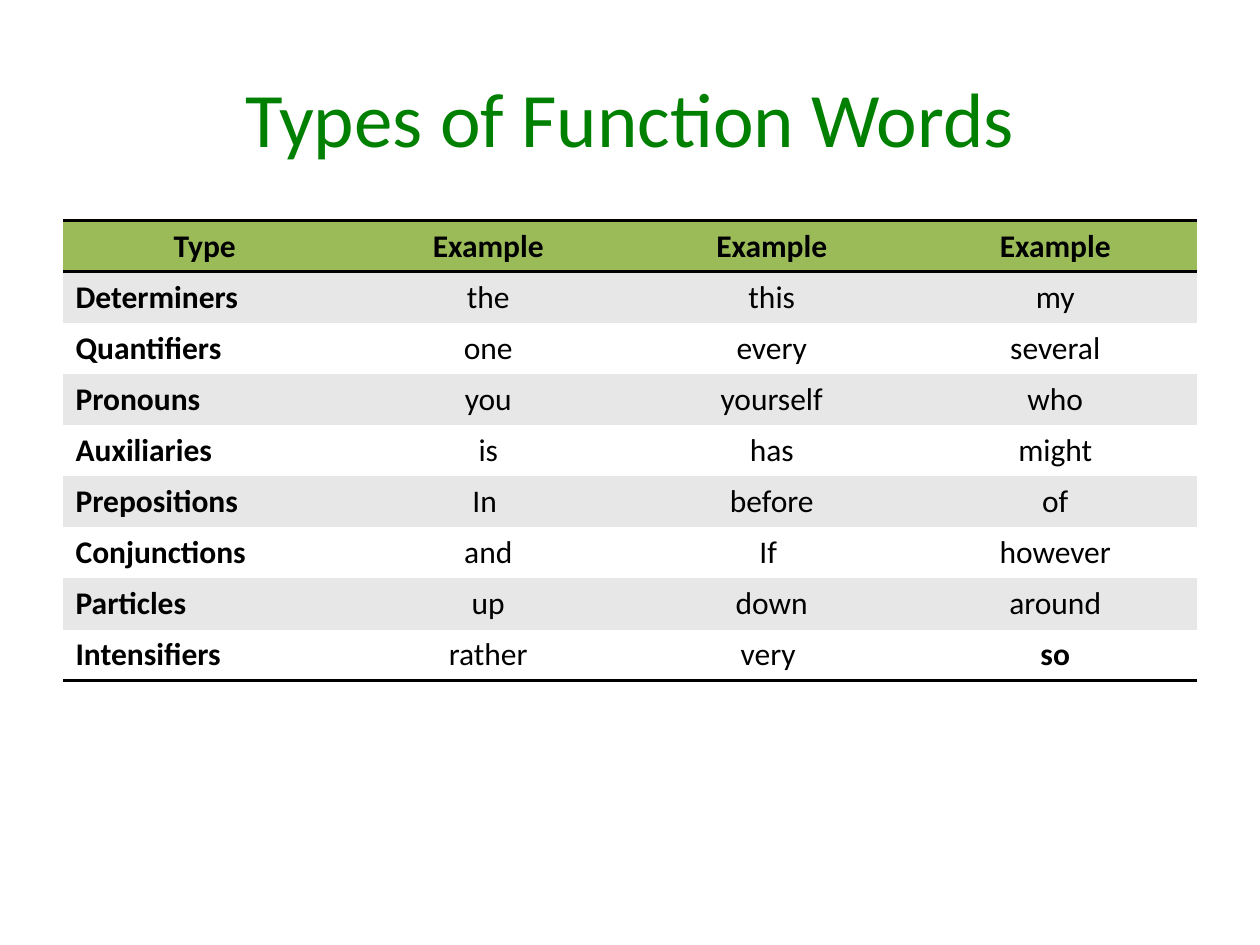
from dataclasses import dataclass

from lxml import etree
from pptx import Presentation
from pptx import util as u
from pptx.dml import color
from pptx.enum import text
from pptx.oxml import ns


@dataclass(frozen=True)
class Theme:
    """Colours, font and type sizes of the slide."""
    green: str = "008000"
    head: str = "9BBB59"
    band: str = "E7E7E7"
    white: str = "FFFFFF"
    black: str = "000000"
    font: str = "Calibri"
    big: int = 44
    body: int = 18
    rule: int = 2


THEME = Theme()
PLAIN = "{2D5ABB26-0587-4C30-8999-92F81FD0307C}"
ROWS = [
    ("Type", "Example", "Example", "Example"),
    ("Determiners", "the", "this", "my"),
    ("Quantifiers", "one", "every", "several"),
    ("Pronouns", "you", "yourself", "who"),
    ("Auxiliaries", "is", "has", "might"),
    ("Prepositions", "In ", "before", "of"),
    ("Conjunctions", "and", "If ", "however"),
    ("Particles", "up", "down", "around"),
    ("Intensifiers", "rather", "very ", "so"),
]


def write(frame, words, size=THEME.body, tint=THEME.black, bold=False, left=False):
    """Put formatted words into the first paragraph of a text frame."""
    para = frame.paragraphs[0]
    para.alignment = text.PP_ALIGN.LEFT if left else text.PP_ALIGN.CENTER
    run = para.add_run()
    run.text = words
    run.font.name = THEME.font
    run.font.size = u.Pt(size)
    run.font.bold = bold
    run.font.color.rgb = color.RGBColor.from_string(tint)


def rule(cell, *sides):
    """Draw a black rule on the given sides of a cell, in schema order."""
    props = cell._tc.get_or_add_tcPr()
    for spot, side in enumerate(sides):
        line = etree.Element(ns.qn(f"a:ln{side}"), w=str(u.Pt(THEME.rule)))
        fill = etree.SubElement(line, ns.qn("a:solidFill"))
        etree.SubElement(fill, ns.qn("a:srgbClr"), val=THEME.black)
        props.insert(spot, line)


def add_title(slide, box):
    """Place the slide title in the box."""
    frame = slide.shapes.add_textbox(*box).text_frame
    frame.word_wrap = True
    frame.vertical_anchor = text.MSO_ANCHOR.MIDDLE
    write(frame, "Types of Function Words", size=THEME.big, tint=THEME.green)


def add_grid(slide, box):
    """Fill the box with the banded table of function words."""
    table = slide.shapes.add_table(len(ROWS), len(ROWS[0]), *box).table
    table._tbl.tblPr.find(ns.qn("a:tableStyleId")).text = PLAIN
    last = len(ROWS) - 1
    for r, row in enumerate(ROWS):
        shade = THEME.head if r == 0 else THEME.band if r % 2 else THEME.white
        for c, word in enumerate(row):
            cell = table.cell(r, c)
            cell.fill.solid()
            cell.fill.fore_color.rgb = color.RGBColor.from_string(shade)
            write(cell.text_frame, word, left=r > 0 and c == 0,
                  bold=r == 0 or c == 0 or word == "so")
            if r == 0:
                rule(cell, "T", "B")
            elif r == last:
                rule(cell, "B")


def main():
    """Build the slide and save it."""
    deck = Presentation()
    deck.slide_width, deck.slide_height = u.Cm(25.4), u.Cm(19.05)
    slide = deck.slides.add_slide(deck.slide_layouts[6])
    edge, width = u.Cm(1.27), u.Cm(22.86)
    add_title(slide, (edge, u.Cm(0.76), width, u.Cm(3.18)))
    add_grid(slide, (edge, u.Cm(4.45), width, u.Cm(9.27)))
    deck.save("out.pptx")


if __name__ == "__main__":
    main()
